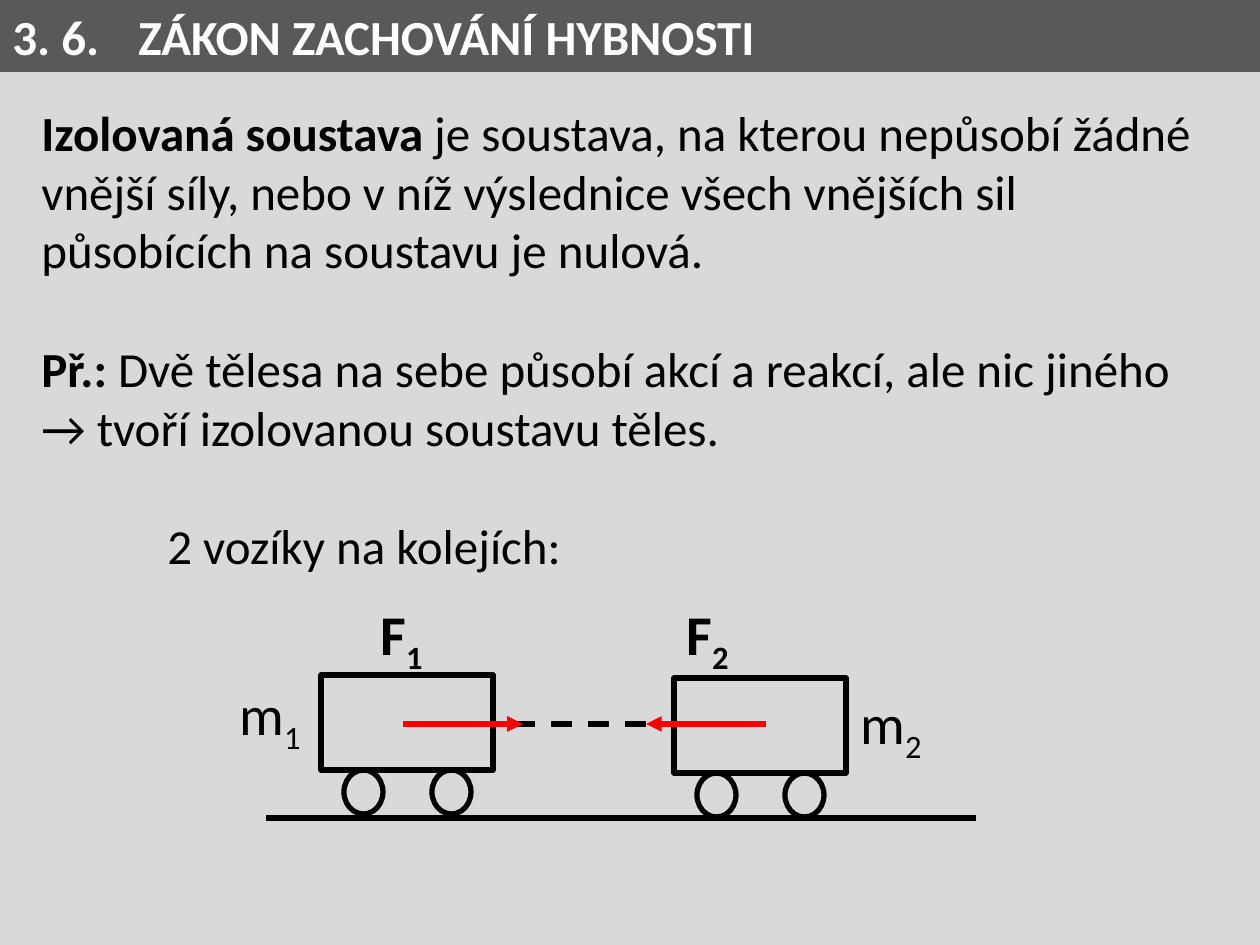
from dataclasses import dataclass
from lxml.etree import SubElement
from pptx import Presentation
from pptx.dml.color import RGBColor
from pptx.enum.dml import MSO_LINE
from pptx.enum.shapes import MSO_CONNECTOR, MSO_SHAPE
from pptx.enum.text import MSO_ANCHOR, PP_ALIGN
from pptx.oxml.ns import qn
from pptx.util import Pt


@dataclass(frozen=True)
class Theme:
    font: str = "Calibri"
    back: RGBColor = RGBColor(0xD9, 0xD9, 0xD9)
    band: RGBColor = RGBColor(0x59, 0x59, 0x59)
    ink: RGBColor = RGBColor(0, 0, 0)
    light: RGBColor = RGBColor(255, 255, 255)
    force: RGBColor = RGBColor(255, 0, 0)
    body: int = 28
    label: int = 32
    stroke: int = 3


THEME = Theme()
SCALE = 914400 / 126


def px(*vals):
    return [round(val * SCALE) for val in vals]


def apply(item, **form):
    for name, value in form.items():
        setattr(item, name, value)


def add_run(para, text, size, color=THEME.ink, bold=False):
    run = para.add_run()
    run.text = text
    apply(run.font, name=THEME.font, size=Pt(size), bold=bold)
    run.font.color.rgb = color
    return run


def add_text(slide, *box):
    frame = slide.shapes.add_textbox(*px(*box)).text_frame
    frame.word_wrap = True
    return frame


def add_title(slide, text):
    band = slide.shapes.add_shape(MSO_SHAPE.RECTANGLE, *px(0, 0, 1260, 72))
    band.shadow.inherit = False
    band.fill.solid()
    band.fill.fore_color.rgb = THEME.band
    band.line.fill.background()
    frame = band.text_frame
    apply(frame, word_wrap=True, vertical_anchor=MSO_ANCHOR.TOP)
    para = frame.paragraphs[0]
    para.alignment = PP_ALIGN.LEFT
    add_run(para, text, THEME.body, THEME.light, True)


def add_body(slide, rows):
    frame = add_text(slide, 29, 96, 1201, 785)
    for num, (lead, text, indent) in enumerate(rows):
        para = frame.add_paragraph() if num else frame.paragraphs[0]
        if num:
            para.space_before = Pt(34)
        if indent:
            props = para._p.get_or_add_pPr()
            props.set("marL", str(px(indent)[0]))
            props.set("indent", "0")
        if lead:
            add_run(para, lead, THEME.body, bold=True)
        for part, line in enumerate(text.split("\n")):
            if part:
                para.add_line_break()
            add_run(para, line, THEME.body)


def add_label(slide, x, y, name, index, bold):
    para = add_text(slide, x, y, 139, 81).paragraphs[0]
    add_run(para, name, THEME.label, bold=bold)
    sub = add_run(para, index, THEME.label, bold=bold)
    sub.font._element.set("baseline", "-25000")


def add_frame(slide, kind, *box):
    shape = slide.shapes.add_shape(kind, *px(*box))
    shape.shadow.inherit = False
    shape.fill.background()
    shape.line.color.rgb = THEME.ink
    shape.line.width = Pt(THEME.stroke)


def add_cart(slide, x, y):
    for shift in (23, 111):
        add_frame(slide, MSO_SHAPE.OVAL, x + shift, y + 95, 39, 44)
    add_frame(slide, MSO_SHAPE.RECTANGLE, x, y, 172, 95)


def add_line(slide, start, end, y, color=THEME.ink, dash=None, arrow=False):
    line = slide.shapes.add_connector(MSO_CONNECTOR.STRAIGHT, *px(start, y, end, y))
    apply(line.line, width=Pt(THEME.stroke), dash_style=dash)
    line.line.color.rgb = color
    if arrow:
        SubElement(line.line._get_or_add_ln(), qn("a:tailEnd"), type="triangle")
    SubElement(line._element.spPr, qn("a:effectLst"))


def main():
    deck = Presentation()
    wide, high = px(1260, 945)
    apply(deck, slide_width=wide, slide_height=high)
    slide = deck.slides.add_slide(deck.slide_layouts[6])
    slide.background.fill.solid()
    slide.background.fill.fore_color.rgb = THEME.back

    add_body(slide, [
        ("Izolovaná soustava", " je soustava, na kterou nepůsobí žádné vnější síly, "
         "nebo v níž výslednice všech vnějších sil působících na soustavu je nulová.", 0),
        ("Př.: ", "Dvě tělesa na sebe působí akcí a reakcí, ale nic jiného\n"
         "→ tvoří izolovanou soustavu těles.", 0),
        ("", "2 vozíky na kolejích:", 126),
    ])
    add_title(slide, "3. 6.\tZÁKON ZACHOVÁNÍ HYBNOSTI")

    add_line(slide, 266, 976, 818)
    for x, y in ((321, 675), (674, 678)):
        add_cart(slide, x, y)
    add_line(slide, 404, 766, 724, dash=MSO_LINE.DASH)
    for start, end in ((403, 523), (766, 646)):
        add_line(slide, start, end, 724, THEME.force, arrow=True)

    for x, y, name, index, bold in (
        (227, 673, "m", "1", False),
        (848, 682, "m", "2", False),
        (368, 593, "F", "1", True),
        (674, 593, "F", "2", True),
    ):
        add_label(slide, x, y, name, index, bold)
    deck.save("out.pptx")


if __name__ == "__main__":
    main()
